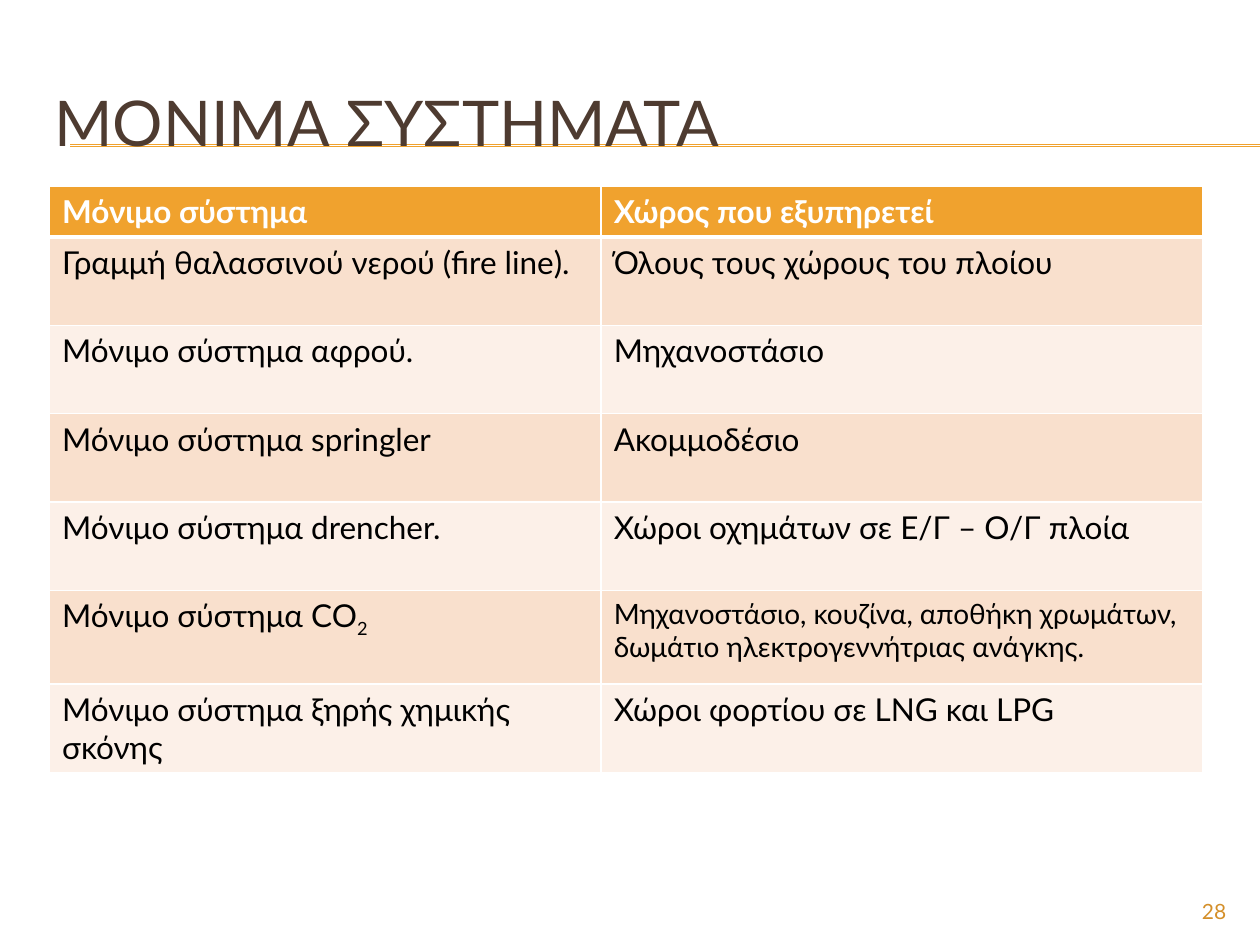
from dataclasses import dataclass

from lxml import etree
from pptx import Presentation
from pptx.dml.color import RGBColor
from pptx.enum.shapes import MSO_CONNECTOR
from pptx.enum.text import MSO_ANCHOR, MSO_AUTO_SIZE, PP_ALIGN
from pptx.oxml.ns import qn
from pptx.util import Cm, Pt

STRAIGHT = MSO_CONNECTOR.STRAIGHT
MIDDLE = MSO_ANCHOR.MIDDLE
NO_FIT = MSO_AUTO_SIZE.NONE
LEFT, RIGHT = PP_ALIGN.LEFT, PP_ALIGN.RIGHT
TITLE_ONLY = 5

FONT = "Lato"
HEX = {
    "title": "4E3B30",
    "accent": "F0A22E",
    "number": "D48F29",
    "dark": "F9E0CD",
    "light": "FCF0E8",
    "white": "FFFFFF",
    "black": "000000",
}
WIDE, HIGH = 25.4, 19.05
COLS = (11.12, 12.12)


@dataclass
class Row:
    system: str
    space: str
    high: float = 1.78
    sub: str = ""
    size: float = 18  # of the text in the second column


ROWS = [
    Row("Μόνιμο σύστημα", "Χώρος που εξυπηρετεί", high=1.02),
    Row("Γραμμή θαλασσινού νερού (fire line).", "Όλους τους χώρους του πλοίου"),
    Row("Μόνιμο σύστημα αφρού.", "Μηχανοστάσιο"),
    Row("Μόνιμο σύστημα springler", "Ακομμοδέσιο"),
    Row("Μόνιμο σύστημα drencher.", "Χώροι οχημάτων σε Ε/Γ – Ο/Γ πλοία"),
    Row("Μόνιμο σύστημα CO",
        "Μηχανοστάσιο, κουζίνα, αποθήκη χρωμάτων, "
        "δωμάτιο ηλεκτρογεννήτριας ανάγκης.",
        high=1.89, sub="2", size=16),
    Row("Μόνιμο σύστημα ξηρής χημικής σκόνης", "Χώροι φορτίου σε LNG και LPG"),
]


def color(name: str) -> RGBColor:
    return RGBColor.from_string(HEX[name])


def add_run(para, text: str, size: float, tone: str,
            bold: bool = False, sub: bool = False) -> None:
    run = para.add_run()
    run.text = text
    font = run.font
    font.name, font.size, font.bold = FONT, Pt(size), bold
    font.color.rgb = color(tone)
    if sub:
        run._r.get_or_add_rPr().set("baseline", "-25000")


def add_rule(slide, top: float) -> None:
    rule = slide.shapes.add_connector(
        STRAIGHT, Cm(1.42), Cm(top), Cm(WIDE), Cm(top))
    rule.line.color.rgb = color("accent")
    rule.line.width = Pt(0.75)
    etree.SubElement(rule._element.spPr, qn("a:effectLst"))


def set_edges(cell, top: float, bottom: float) -> None:
    """Draw white cell borders; top and bottom are widths in points."""
    props = cell._tc.get_or_add_tcPr()
    edges = {"a:lnL": 1, "a:lnR": 1, "a:lnT": top, "a:lnB": bottom}
    for spot, (tag, width) in enumerate(edges.items()):
        line = etree.Element(qn(tag), w=str(Pt(width)))
        fill = etree.SubElement(line, qn("a:solidFill"))
        etree.SubElement(fill, qn("a:srgbClr"), val=HEX["white"])
        props.insert(spot, line)


def fill_row(table, index: int, row: Row) -> None:
    head = index == 0
    back = "accent" if head else ("light", "dark")[index % 2]
    tone = "white" if head else "black"
    table.rows[index].height = Cm(row.high)
    for col, (text, size) in enumerate(
            [(row.system, 18), (row.space, row.size)]):
        cell = table.cell(index, col)
        cell.fill.solid()
        cell.fill.fore_color.rgb = color(back)
        set_edges(cell, 3 if index == 1 else 1, 3 if head else 1)
        para = cell.text_frame.paragraphs[0]
        add_run(para, text, size, tone, head)
        if col == 0 and row.sub:
            add_run(para, row.sub, size, tone, sub=True)


def add_table(slide) -> None:
    table = slide.shapes.add_table(
        len(ROWS), len(COLS), Cm(1), Cm(3.76), Cm(sum(COLS)),
        Cm(sum(row.high for row in ROWS))).table
    for col, width in zip(table.columns, COLS):
        col.width = Cm(width)
    for index, row in enumerate(ROWS):
        fill_row(table, index, row)


def set_title(slide, text: str) -> None:
    title = slide.shapes.title
    title.left, title.top = Cm(0.84), Cm(1.27)
    title.width, title.height = Cm(24.13), Cm(2.34)
    frame = title.text_frame
    frame.auto_size, frame.vertical_anchor = NO_FIT, MIDDLE
    para = frame.paragraphs[0]
    para.alignment = LEFT
    add_run(para, text, 36, "title")
    slide.shapes._spTree.append(title._element)  # in front of the rules


def add_number(slide, text: str) -> None:
    box = slide.shapes.add_textbox(Cm(22.86), Cm(17.98), Cm(2.11), Cm(0.69))
    box.text_frame.word_wrap = True
    para = box.text_frame.paragraphs[0]
    para.alignment = RIGHT
    add_run(para, text, 12, "number")


def main() -> None:
    deck = Presentation()
    deck.slide_width, deck.slide_height = Cm(WIDE), Cm(HIGH)
    slide = deck.slides.add_slide(deck.slide_layouts[TITLE_ONLY])
    for top in (2.92, 2.95):
        add_rule(slide, top)
    set_title(slide, "ΜΟΝΙΜΑ ΣΥΣΤΗΜΑΤΑ")
    add_table(slide)
    add_number(slide, "28")
    deck.save("out.pptx")


if __name__ == "__main__":
    main()
